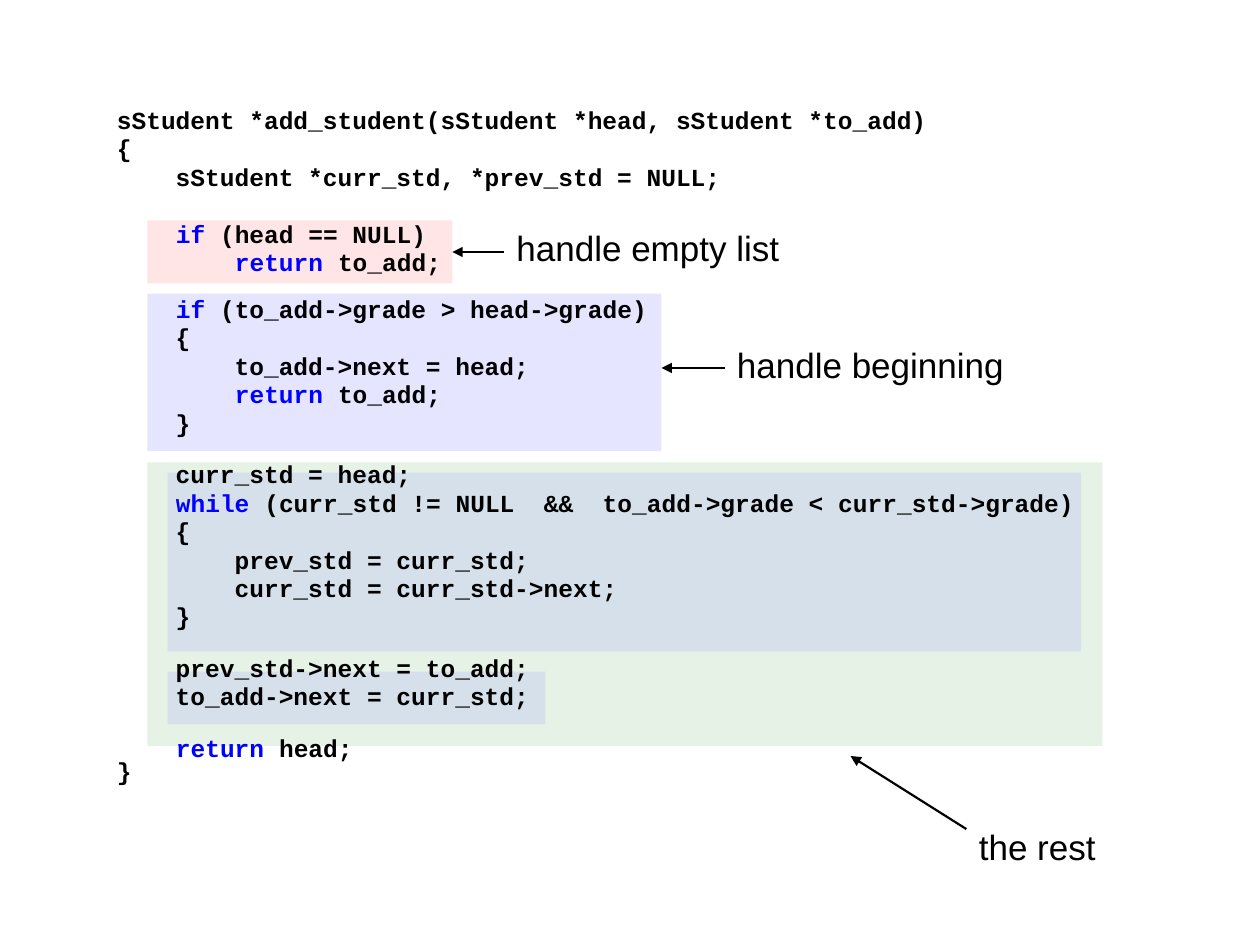
"""Build a slide explaining the three cases of a linked-list insertion."""
from lxml import etree
from pptx import Presentation
from pptx.dml.color import RGBColor
from pptx.enum import shapes, text
from pptx.oxml.ns import qn
from pptx.util import Inches, Pt

BLACK = RGBColor(0, 0, 0)
BLUE = RGBColor(0, 0, 255)
RED = RGBColor(255, 0, 0)
GREEN = RGBColor(0, 128, 0)
LILAC = RGBColor(0x99, 0x99, 0xFF)
KEYWORDS = ("if", "return", "while")
STEP, GAP = 2.8, 16

CODE = [
    ("sStudent *add_student(sStudent *head, sStudent *to_add)", 0),
    ("{", STEP),
    ("    sStudent *curr_std, *prev_std = NULL;", STEP),
    ("    if (head == NULL)", 19),
    ("        return to_add;", STEP),
    ("    if (to_add->grade > head->grade)", 13.4),
    ("    {", STEP),
    ("        to_add->next = head;", STEP),
    ("        return to_add;", STEP),
    ("    }", STEP),
    ("    curr_std = head;", GAP),
    ("    while (curr_std != NULL  &&  to_add->grade < curr_std->grade)", STEP),
    ("    {", STEP),
    ("        prev_std = curr_std;", STEP),
    ("        curr_std = curr_std->next;", STEP),
    ("    }", STEP),
    ("    prev_std->next = to_add;", GAP),
    ("    to_add->next = curr_std;", STEP),
    ("    return head;", GAP),
    ("}", 0),
]


def add_highlight(s, box, color, opacity):
    """Add a translucent borderless rectangle."""
    sp = s.shapes.add_shape(shapes.MSO_SHAPE.RECTANGLE, *map(Inches, box))
    sp.shadow.inherit = False
    sp.fill.solid()
    sp.fill.fore_color.rgb = color
    sp.line.fill.background()
    clr = sp.fill._xPr.find(".//" + qn("a:srgbClr"))
    etree.SubElement(clr, qn("a:alpha"), val=str(opacity * 1000))
    return sp


def add_text_frame(s, box):
    """Add a wrapping text box and return its text frame."""
    tf = s.shapes.add_textbox(*map(Inches, box)).text_frame
    tf.word_wrap = True
    return tf


def add_run(p, words, font, size, color=BLACK, bold=False):
    """Add one formatted run to a paragraph."""
    r = p.add_run()
    r.text = words
    r.font.name = font
    r.font.size = Pt(size)
    r.font.bold = bold
    r.font.color.rgb = color


def add_code(s, box, lines):
    """Add a code listing with coloured keywords."""
    tf = add_text_frame(s, box)
    for i, (line, before) in enumerate(lines):
        p = tf.paragraphs[0] if i == 0 else tf.add_paragraph()
        p.line_spacing = 0.8
        if before:
            p.space_before = Pt(before)
        word = line.split()[0]
        parts = line.partition(word) if word in KEYWORDS else (line,)
        for part in parts:
            color = BLUE if part in KEYWORDS else BLACK
            add_run(p, part, "Courier New", 14, color, True)


def add_label(s, left, top, width, words):
    """Add an explanatory label."""
    tf = add_text_frame(s, (left, top, width, 0.43))
    tf.auto_size = text.MSO_AUTO_SIZE.SHAPE_TO_FIT_TEXT
    add_run(tf.paragraphs[0], words, "Arial", 20)


def add_arrow(s, start, end, target=None):
    """Add an arrow, joined to the right side of a target if given."""
    c = s.shapes.add_connector(shapes.MSO_CONNECTOR.STRAIGHT, *map(Inches, start + end))
    c.line.color.rgb = BLACK
    c.line.width = Pt(1.25)
    etree.SubElement(c.line._get_or_add_ln(), qn("a:tailEnd"), type="triangle")
    etree.SubElement(c._element.spPr, qn("a:effectLst"))
    if target is not None:
        c.end_connect(target, 3)


def main():
    """Build and save the slide."""
    prs = Presentation()
    prs.slide_width, prs.slide_height = Inches(10), Inches(7.5)
    s = prs.slides.add_slide(prs.slide_layouts[6])

    add_highlight(s, (1.17, 3.67, 7.58, 2.25), GREEN, 10)
    empty_case = add_highlight(s, (1.17, 1.75, 2.42, 0.5), RED, 10)
    add_highlight(s, (1.17, 2.33, 4.08, 1.25), BLUE, 10)
    add_highlight(s, (1.33, 3.75, 7.25, 1.42), LILAC, 20)
    add_highlight(s, (1.33, 5.33, 3, 0.42), LILAC, 20)

    add_code(s, (0.83, 0.83, 8.67, 6), CODE)

    add_label(s, 4, 1.75, 3.08, "handle empty list")
    add_label(s, 5.75, 2.68, 3.08, "handle beginning")
    add_label(s, 7.67, 6.5, 1.25, "the rest")

    add_arrow(s, (4, 2), (3.58, 2), empty_case)
    add_arrow(s, (5.75, 2.92), (5.25, 2.92))
    add_arrow(s, (7.67, 6.58), (6.75, 6))

    prs.save("out.pptx")


if __name__ == "__main__":
    main()
